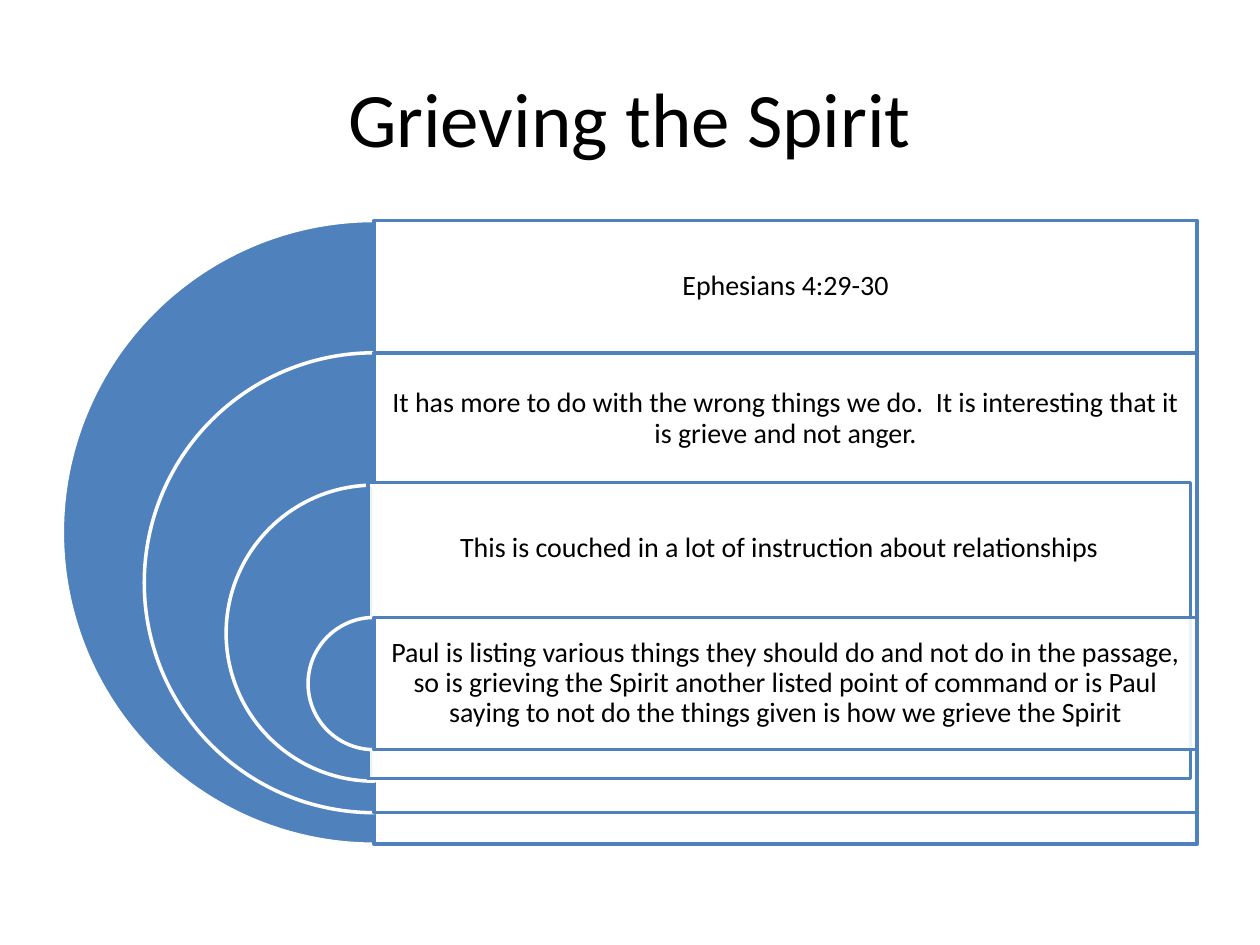
from dataclasses import dataclass

from lxml import etree
from pptx import Presentation
from pptx import util as u
from pptx.dml.color import RGBColor
from pptx.enum import shapes, text
from pptx.oxml import ns

BLUE = RGBColor(0x4F, 0x81, 0xBD)
WHITE = RGBColor(0xFF, 0xFF, 0xFF)
BLACK = RGBColor(0, 0, 0)
FONT = "Calibri"

CENTER_X, FIRST_TOP, ROW_HEIGHT = 2.97, 1.75, 1.05
FIRST_DIAMETER, DIAMETER_STEP = 4.95, 1.3
PANEL_WIDTH, INSET = 6.53, 0.07


@dataclass
class Layer:
    message: str
    dx: float = 0
    dy: float = 0


LAYERS = [
    Layer("Ephesians 4:29-30"),
    Layer("It has more to do with the wrong things we do.  "
          "It is interesting that it is grieve and not anger."),
    Layer("This is couched in a lot of instruction about relationships",
          dx=-0.05, dy=-0.02),
    Layer("Paul is listing various things they should do and not do in the passage, "
          "so is grieving the Spirit another listed point of command or is Paul "
          "saying to not do the things given is how we grieve the Spirit"),
]


def format_text(tf, message: str, size: float):
    tf.word_wrap = True
    tf.vertical_anchor = text.MSO_ANCHOR.MIDDLE
    p = tf.paragraphs[0]
    p.text = message
    p.alignment = text.PP_ALIGN.CENTER
    p.font.name = FONT
    p.font.size = u.Pt(size)
    p.font.color.rgb = BLACK
    return p


def add_filled(group, kind, left: float, top: float, width: float, height: float,
               fill: RGBColor, line: RGBColor):
    sp = group.shapes.add_shape(kind, u.Inches(left), u.Inches(top),
                                u.Inches(width), u.Inches(height))
    sp.shadow.inherit = False
    sp.fill.solid()
    sp.fill.fore_color.rgb = fill
    sp.line.color.rgb = line
    sp.line.width = u.Pt(2)
    return sp


def add_layer(group, index: int, layer: Layer) -> None:
    top = FIRST_TOP + index * ROW_HEIGHT
    diameter = FIRST_DIAMETER - index * DIAMETER_STEP
    pie = add_filled(group, shapes.MSO_SHAPE.PIE, CENTER_X - diameter / 2, top,
                     diameter, diameter, BLUE, WHITE)
    pie.adjustments[0], pie.adjustments[1] = 54, 162

    left, top = CENTER_X + layer.dx, top + layer.dy
    panel = add_filled(group, shapes.MSO_SHAPE.RECTANGLE, left, top,
                       PANEL_WIDTH, diameter, WHITE, BLUE)
    color = panel.fill._xPr.find(".//" + ns.qn("a:srgbClr"))
    etree.SubElement(color, ns.qn("a:alpha"), val="90000")

    box = group.shapes.add_textbox(u.Inches(left), u.Inches(top),
                                   u.Inches(PANEL_WIDTH), u.Inches(ROW_HEIGHT))
    tf = box.text_frame
    tf.margin_left = tf.margin_right = u.Inches(INSET)
    tf.margin_top = tf.margin_bottom = u.Inches(INSET)
    p = format_text(tf, layer.message, 16)
    p.line_spacing = 0.9


def main() -> None:
    prs = Presentation()
    prs.slide_width, prs.slide_height = u.Inches(10), u.Inches(7.5)
    s = prs.slides.add_slide(prs.slide_layouts[5])
    title = s.shapes.title
    title.left, title.top = u.Inches(0.5), u.Inches(0.3)
    title.width, title.height = u.Inches(9), u.Inches(1.25)
    format_text(title.text_frame, "Grieving the Spirit", 44)

    group = s.shapes.add_group_shape()
    for index, layer in enumerate(LAYERS):
        add_layer(group, index, layer)
    prs.save("out.pptx")


if __name__ == "__main__":
    main()
